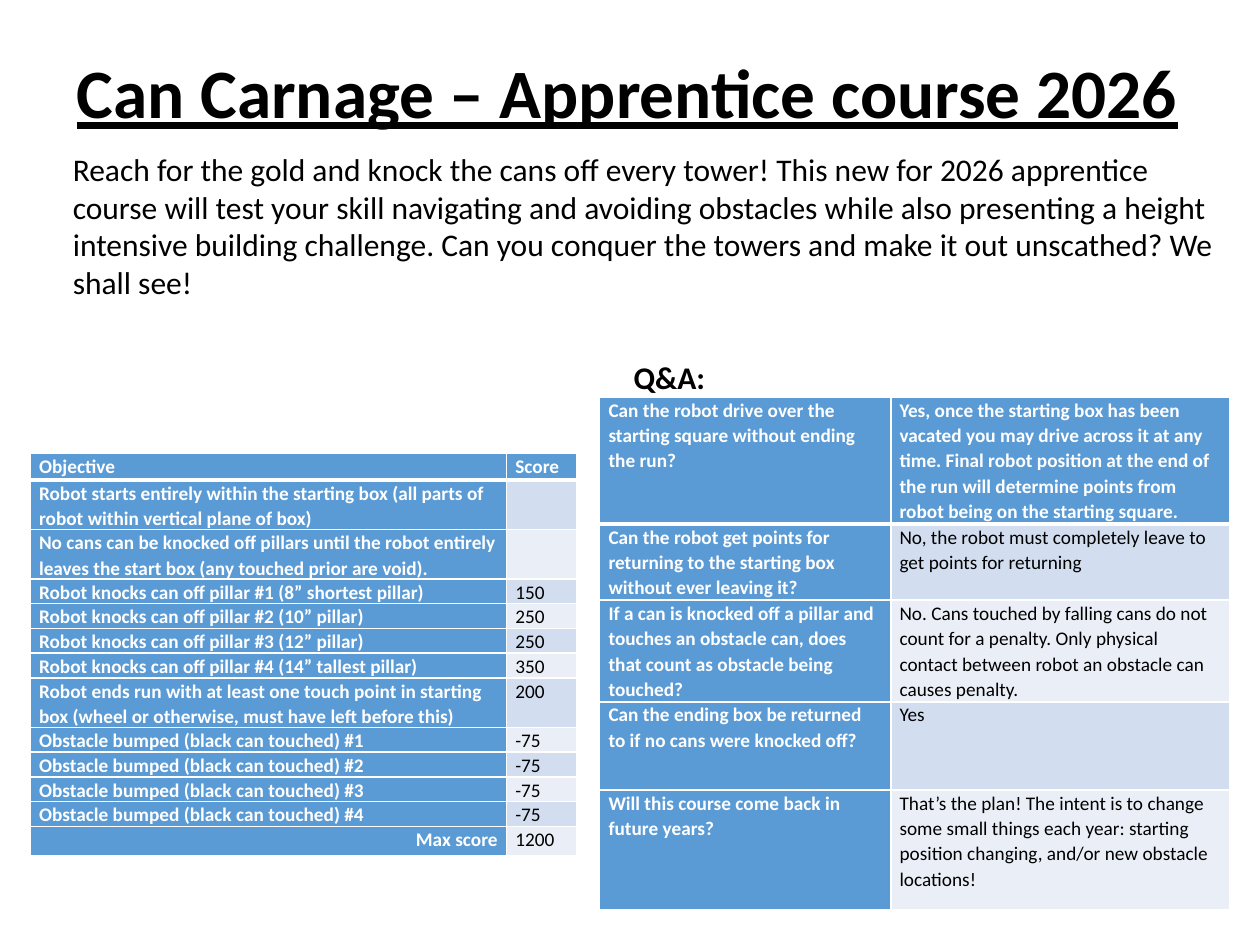
from lxml import etree
from pptx import Presentation
from pptx.dml.color import RGBColor
from pptx.enum.text import MSO_ANCHOR, MSO_AUTO_SIZE, PP_ALIGN
from pptx.oxml.ns import qn
from pptx.util import Inches, Pt

LEFT, RIGHT = PP_ALIGN.LEFT, PP_ALIGN.RIGHT
MIDDLE, TOP = MSO_ANCHOR.MIDDLE, MSO_ANCHOR.TOP
FIT_SHAPE, NO_FIT = MSO_AUTO_SIZE.SHAPE_TO_FIT_TEXT, MSO_AUTO_SIZE.NONE

THEME = {
    "font": "Calibri",
    "title": 39.6, "body": 18, "cell": 11,
    "ink": "000000", "paper": "FFFFFF",
    "head": "5B9BD5", "bands": ("D2DEEF", "EAEFF7"),
    "rule": 1, "head_rule": 3,
    "line_spacing": 1.07, "space_after": 8,
}

# Content
TITLE = "Can Carnage – Apprentice course 2026"
INTRO = (
    "Reach for the gold and knock the cans off every tower! This new for 2026 "
    "apprentice course will test your skill navigating and avoiding obstacles while "
    "also presenting a height intensive building challenge. Can you conquer the towers "
    "and make it out unscathed? We shall see!"
)
QA_HEADING = "Q&A:"
QA = [
    ("Can the robot drive over the starting square without ending the run?",
     "Yes, once the starting box has been vacated you may drive across it at any time. "
     "Final robot position at the end of the run will determine points from robot being "
     "on the starting square."),
    ("Can the robot get points for returning to the starting box without ever leaving it?",
     "No, the robot must completely leave to get points for returning"),
    ("If a can is knocked off a pillar and touches an obstacle can, does that count as "
     "obstacle being touched?",
     "No. Cans touched by falling cans do not count for a penalty. Only physical contact "
     "between robot an obstacle can causes penalty."),
    ("Can the ending box be returned to if no cans were knocked off?", "Yes"),
    ("Will this course come back in future years?",
     "That’s the plan! The intent is to change some small things each year: starting "
     "position changing, and/or new obstacle locations!"),
]
QA_ROWS = [1, 0.6, 0.8, 0.7, 0.95]

PILLARS = [("8” shortest pillar", 150), ("10” pillar", 250),
           ("12” pillar", 250), ("14” tallest pillar", 350)]
SCORES = [
    ("Objective", "Score"),
    ("Robot starts entirely within the starting box (all parts of robot within vertical "
     "plane of box)", ""),
    ("No cans can be knocked off pillars until the robot entirely leaves the start box "
     "(any touched prior are void).", ""),
    *[(f"Robot knocks can off pillar #{n} ({size})", str(points))
      for n, (size, points) in enumerate(PILLARS, 1)],
    ("Robot ends run with at least one touch point in starting box (wheel or otherwise, "
     "must have left before this)", "200"),
    *[(f"Obstacle bumped (black can touched) #{n}", "-75") for n in range(1, 5)],
    ("Max score", "1200"),
]
ONE_LINE, TWO_LINES = 0.19, 0.39
SCORE_ROWS = [0.21] + [TWO_LINES] * 2 + [ONE_LINE] * 4 + [TWO_LINES] + [ONE_LINE] * 4 + [0.23]


def color(key):
    return RGBColor.from_string(THEME[key])


def add_text(paragraph, text, size, ink="ink", bold=False, underline=False):
    run = paragraph.add_run()
    run.text = text
    font = run.font
    font.name, font.size = THEME["font"], Pt(THEME[size])
    font.bold, font.underline = bold, underline
    font.color.rgb = color(ink)


def space_lines(paragraph):
    paragraph.line_spacing = THEME["line_spacing"]
    paragraph.space_after = Pt(THEME["space_after"])


def add_text_box(slide, box, text, bold=False):
    frame = slide.shapes.add_textbox(*map(Inches, box)).text_frame
    frame.word_wrap = True
    frame.auto_size = FIT_SHAPE
    add_text(frame.paragraphs[0], text, "body", bold=bold)
    return frame.paragraphs[0]


def rule_cell(cell, top, bottom):
    properties = cell._tc.get_or_add_tcPr()
    side = THEME["rule"]
    for tag, width in (("lnL", side), ("lnR", side), ("lnT", top), ("lnB", bottom)):
        line = etree.SubElement(properties, qn(f"a:{tag}"), w=str(Pt(width)))
        fill = etree.SubElement(line, qn("a:solidFill"))
        etree.SubElement(fill, qn("a:srgbClr"), val=THEME["paper"])


def add_grid(slide, left, top, columns, heights, content):
    """Table whose first row and first column are headings and whose body is banded."""
    table = slide.shapes.add_table(
        len(content), len(columns), Inches(left), Inches(top),
        Inches(sum(columns)), Inches(sum(heights))).table
    for column, width in zip(table.columns, columns):
        column.width = Inches(width)
    for r, (row, height, texts) in enumerate(zip(table.rows, heights, content)):
        row.height = Inches(height)
        for c, (cell, text) in enumerate(zip(row.cells, texts)):
            heading = r == 0 or c == 0
            rule_cell(cell,
                      THEME["head_rule" if r == 1 else "rule"],
                      THEME["head_rule" if r == 0 else "rule"])
            fill = THEME["head"] if heading else THEME["bands"][(r - 1) % 2]
            cell.fill.solid()
            cell.fill.fore_color.rgb = RGBColor.from_string(fill)
            cell.margin_left = cell.margin_right = Inches(0.07)
            cell.margin_top = cell.margin_bottom = 0
            cell.vertical_anchor = TOP
            paragraph = cell.text_frame.paragraphs[0]
            space_lines(paragraph)
            if text:
                add_text(paragraph, text, "cell", "paper" if heading else "ink", heading)
    return table


def main():
    deck = Presentation()
    deck.slide_width, deck.slide_height = Inches(10), Inches(7.5)
    slide = deck.slides.add_slide(deck.slide_layouts[5])

    # Title, raised above the intro by its bottom inset
    title = slide.shapes.title
    title.left, title.top, title.width, title.height = map(Inches, (0.51, 0.34, 9.31, 1.45))
    frame = title.text_frame
    frame.word_wrap = True
    frame.auto_size = NO_FIT
    frame.vertical_anchor = MIDDLE
    frame.margin_bottom = Inches(0.65)
    heading = frame.paragraphs[0]
    heading.alignment, heading.line_spacing = LEFT, 0.9
    add_text(heading, TITLE, "title", bold=True, underline=True)

    # Questions and answers
    add_grid(slide, 4.76, 3.15, [2.31, 2.69], QA_ROWS, QA)

    # Intro and heading of the questions
    add_text_box(slide, (0.48, 1.14, 9.34, 1.31), INTRO)
    space_lines(add_text_box(slide, (4.93, 2.77, 5, 0.41), QA_HEADING, bold=True))

    # Scoring
    scoring = add_grid(slide, 0.24, 3.6, [3.78, 0.56], SCORE_ROWS, SCORES)
    max_score = scoring.cell(len(SCORES) - 1, 0)
    max_score.text_frame.paragraphs[0].alignment = RIGHT

    deck.save("out.pptx")


if __name__ == "__main__":
    main()
